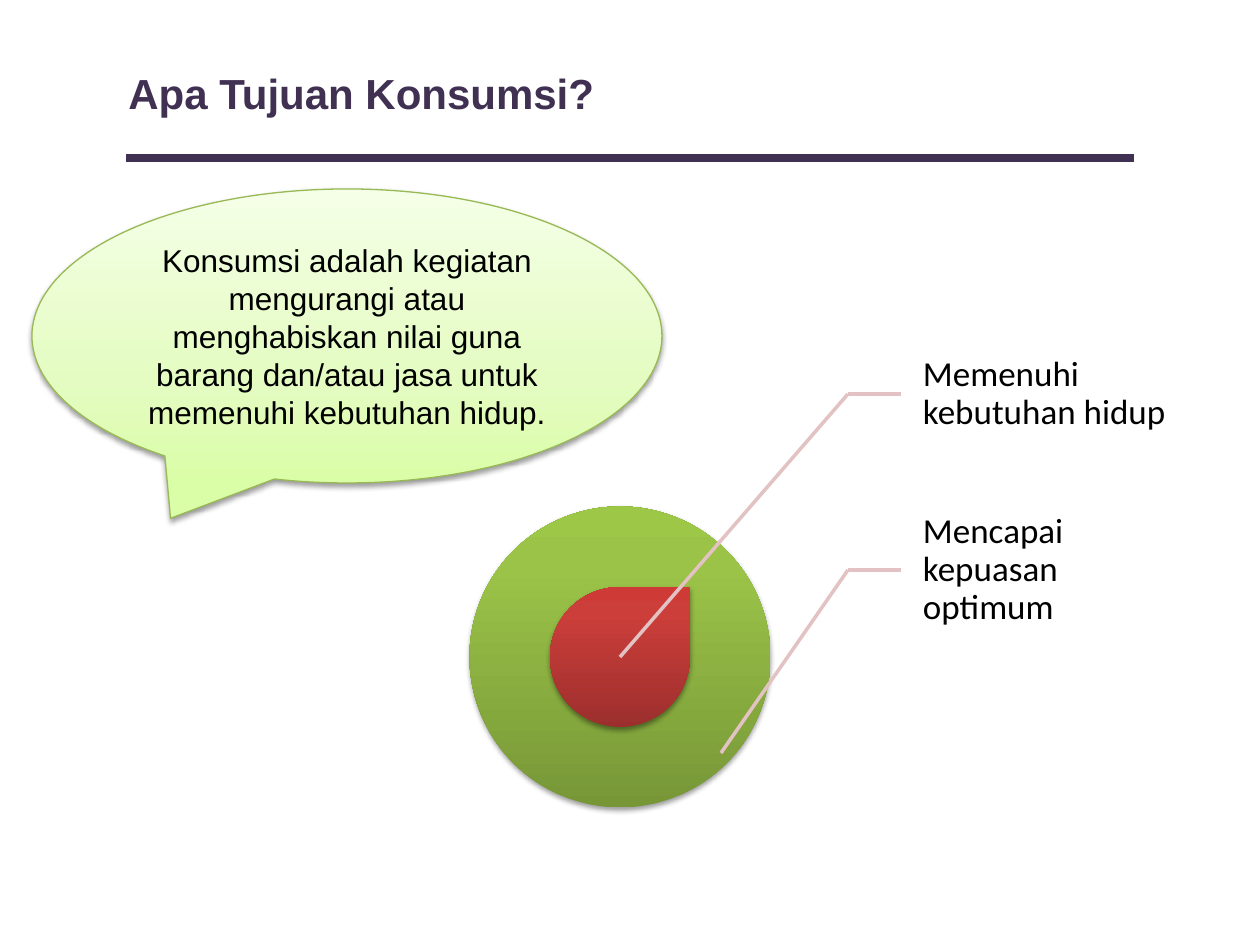
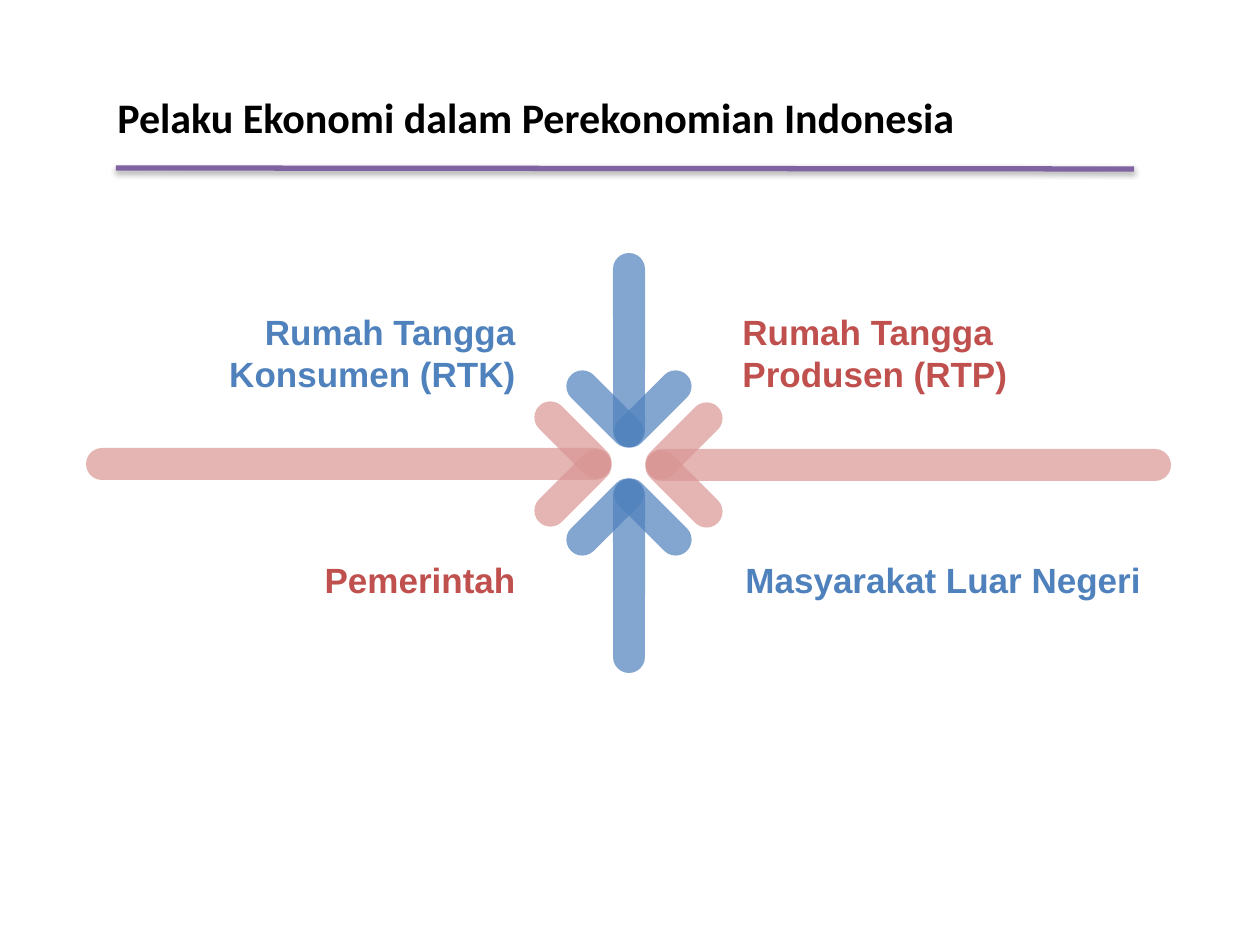
"""Build two slides about the aims of consumption and the economic actors."""
from lxml import etree
from pptx import Presentation, util as u
from pptx.dml.color import RGBColor
from pptx.enum import shapes, text
from pptx.oxml.ns import qn

PX_PER_INCH = 126
SLIDE_SIZE = (1260, 945)
DARK_PURPLE, PURPLE, BLACK, WHITE = "403152", "8064A2", "000000", "FFFFFF"
BLUE, RED, PINK, LEADER = "4F81BD", "C0504D", "D99694", "E2C2C2"
LEFT, RIGHT, CENTER = text.PP_ALIGN.LEFT, text.PP_ALIGN.RIGHT, text.PP_ALIGN.CENTER
TOP, MIDDLE = text.MSO_ANCHOR.TOP, text.MSO_ANCHOR.MIDDLE
SHAPE = shapes.MSO_SHAPE

AIMS_TITLE = ("Apa Tujuan Konsumsi?", (116, 38, 1029, 110), "Arial", DARK_PURPLE)
AIMS_RULE = ((126, 158), (1134, 158), DARK_PURPLE, 4.5)
DEFINITION = ("Konsumsi adalah kegiatan mengurangi atau menghabiskan nilai guna "
              "barang dan/atau jasa untuk memenuhi kebutuhan hidup.")
BUBBLE_BOX = (32, 189, 630, 294)
BUBBLE_STOPS = [(0, "DAFDA7"), (35, "E4FCC2"), (100, "F5FFE7")]
TARGET_CENTER = (620, 657)
TARGET_RINGS = [
    (SHAPE.OVAL, 301, [(0, "779737"), (80, "9BC348"), (100, "9DC746")]),
    (SHAPE.TEAR, 140, [(0, "9C2F2D"), (80, "CB3E3A"), (100, "CE3B37")]),
]
AIMS = [
    ("Memenuhi kebutuhan hidup", 394, TARGET_CENTER),
    ("Mencapai kepuasan optimum", 570, (721, 753)),
]

ACTORS_TITLE = ("Pelaku Ekonomi dalam Perekonomian Indonesia",
                (105, 38, 1029, 158), "Calibri", BLACK)
ACTORS_RULE = ((116, 168), (1134, 169), PURPLE, 3)
ARROWS = [
    ((595, 464), (-1, 0), 525, PINK),
    ((662, 465), (1, 0), 525, PINK),
    ((629, 495), (0, 1), 194, BLUE),
    ((629, 431), (0, -1), 194, BLUE),
]
ACTORS = [
    ("Rumah Tangga Konsumen (RTK)", (93, 304, 435, 100), RIGHT, BLUE),
    ("Rumah Tangga Produsen (RTP)", (730, 304, 435, 100), LEFT, RED),
    ("Pemerintah", (93, 552, 435, 55), RIGHT, RED),
    ("Masyarakat Luar Negeri", (733, 552, 435, 55), LEFT, BLUE),
]
BAR, BARB_LENGTH, BARB_ALONG, BARB_ACROSS = 32, 96, 22, 24


def emu(*pixels):
    return [u.Emu(round(value * u.Inches(1) / PX_PER_INCH)) for value in pixels]


def colour(value):
    return RGBColor.from_string(value)


def set_effect(shape, opacity=0):
    properties = shape._element.spPr
    effects = properties.find(qn("a:effectLst"))
    if effects is None:
        effects = etree.SubElement(properties, qn("a:effectLst"))
    if opacity:
        shadow = etree.SubElement(effects, qn("a:outerShdw"), blurRad=str(u.Pt(3.1)),
                                  dist=str(u.Pt(1.6)), dir="5400000", rotWithShape="0")
        shade = etree.SubElement(shadow, qn("a:srgbClr"), val=BLACK)
        etree.SubElement(shade, qn("a:alpha"), val=str(opacity * 1000))


def write(shape, words, font, size, ink, bold=False, align=LEFT, anchor=MIDDLE):
    frame = shape.text_frame
    frame.word_wrap = True
    frame.vertical_anchor = anchor
    paragraph = frame.paragraphs[0]
    paragraph.text = words
    paragraph.alignment = align
    paragraph.font.name, paragraph.font.size = font, u.Pt(size)
    paragraph.font.bold = bold
    paragraph.font.color.rgb = colour(ink)
    return frame, paragraph


def add_line(slide, start, end, ink, width, opacity=0):
    line = slide.shapes.add_connector(shapes.MSO_CONNECTOR.STRAIGHT, *emu(*start, *end))
    line.line.color.rgb = colour(ink)
    line.line.width = u.Pt(width)
    set_effect(line, opacity)


def add_title(slide, words, box, font, ink):
    write(slide.shapes.add_textbox(*emu(*box)), words, font, 24, ink, bold=True)


def add_solid(slide, kind, box, fill):
    shape = slide.shapes.add_shape(kind, *emu(*box))
    shape.fill.solid()
    shape.fill.fore_color.rgb = colour(fill)
    shape.line.fill.background()
    shape.shadow.inherit = False
    return shape


def add_gradient(slide, kind, box, stops, outline=None):
    shape = slide.shapes.add_shape(kind, *emu(*box))
    shape.fill.gradient()
    shape.fill.gradient_angle = 90
    stop_list = shape._element.spPr.find(".//" + qn("a:gsLst"))
    stop_list.clear()
    for position, tint in stops:
        stop = etree.SubElement(stop_list, qn("a:gs"), pos=str(position * 1000))
        etree.SubElement(stop, qn("a:srgbClr"), val=tint)
    if outline:
        shape.line.color.rgb = colour(outline)
        shape.line.width = u.Pt(0.75)
    else:
        shape.line.fill.background()
    shape.shadow.inherit = False
    set_effect(shape, 38)
    return shape


def add_bar(slide, center, length, rotation, fill):
    box = (center[0] - length / 2, center[1] - BAR / 2, length, BAR)
    bar = add_solid(slide, SHAPE.ROUNDED_RECTANGLE, box, fill)
    bar.adjustments[0] = 0.5
    bar.rotation = rotation
    tint = bar._element.spPr.find(".//" + qn("a:srgbClr"))
    etree.SubElement(tint, qn("a:alpha"), val="70000")


def add_arrow(slide, tip, direction, length, fill):
    (x, y), (dx, dy) = tip, direction
    reach = (length - BAR) / 2
    add_bar(slide, (x + dx * reach, y + dy * reach), length, 90 if dy else 0, fill)
    for side in (-1, 1):
        across = side * BARB_ACROSS
        shift_x = dx * BARB_ALONG + dy * across
        shift_y = dy * BARB_ALONG + dx * across
        rotation = 45 if shift_x * shift_y > 0 else 315
        add_bar(slide, (x + shift_x, y + shift_y), BARB_LENGTH, rotation, fill)


def add_aim(slide, words, y, target):
    label = slide.shapes.add_textbox(*emu(903, y - 54, 284, 108))
    frame, paragraph = write(label, words, "Calibri", 20, BLACK)
    frame.margin_left, frame.margin_right = emu(20, 4)
    frame.margin_top, frame.margin_bottom = emu(4, 4)
    paragraph.line_spacing = 0.9
    for end in ((901, y), target):
        add_line(slide, (848, y), end, LEADER, 2)


def build_aims(slide):
    add_title(slide, *AIMS_TITLE)
    add_line(slide, *AIMS_RULE)
    bubble = add_gradient(slide, SHAPE.OVAL_CALLOUT, BUBBLE_BOX, BUBBLE_STOPS, "98B955")
    bubble.adjustments[0], bubble.adjustments[1] = -0.28, 0.62
    write(bubble, DEFINITION, "Arial", 18, BLACK, align=CENTER)
    for kind, size, stops in TARGET_RINGS:
        left, top = (middle - size / 2 for middle in TARGET_CENTER)
        add_gradient(slide, kind, (left, top, size, size), stops)
    for aim in AIMS:
        add_aim(slide, *aim)


def build_actors(slide):
    add_title(slide, *ACTORS_TITLE)
    for arrow in ARROWS:
        add_arrow(slide, *arrow)
    for words, box, align, ink in ACTORS:
        label = add_solid(slide, SHAPE.RECTANGLE, box, WHITE)
        write(label, words, "Arial", 20, ink, bold=True, align=align, anchor=TOP)
    add_line(slide, *ACTORS_RULE, opacity=35)


def main():
    presentation = Presentation()
    presentation.slide_width, presentation.slide_height = emu(*SLIDE_SIZE)
    for build in (build_aims, build_actors):
        build(presentation.slides.add_slide(presentation.slide_layouts[6]))
    presentation.save("out.pptx")


if __name__ == "__main__":
    main()
